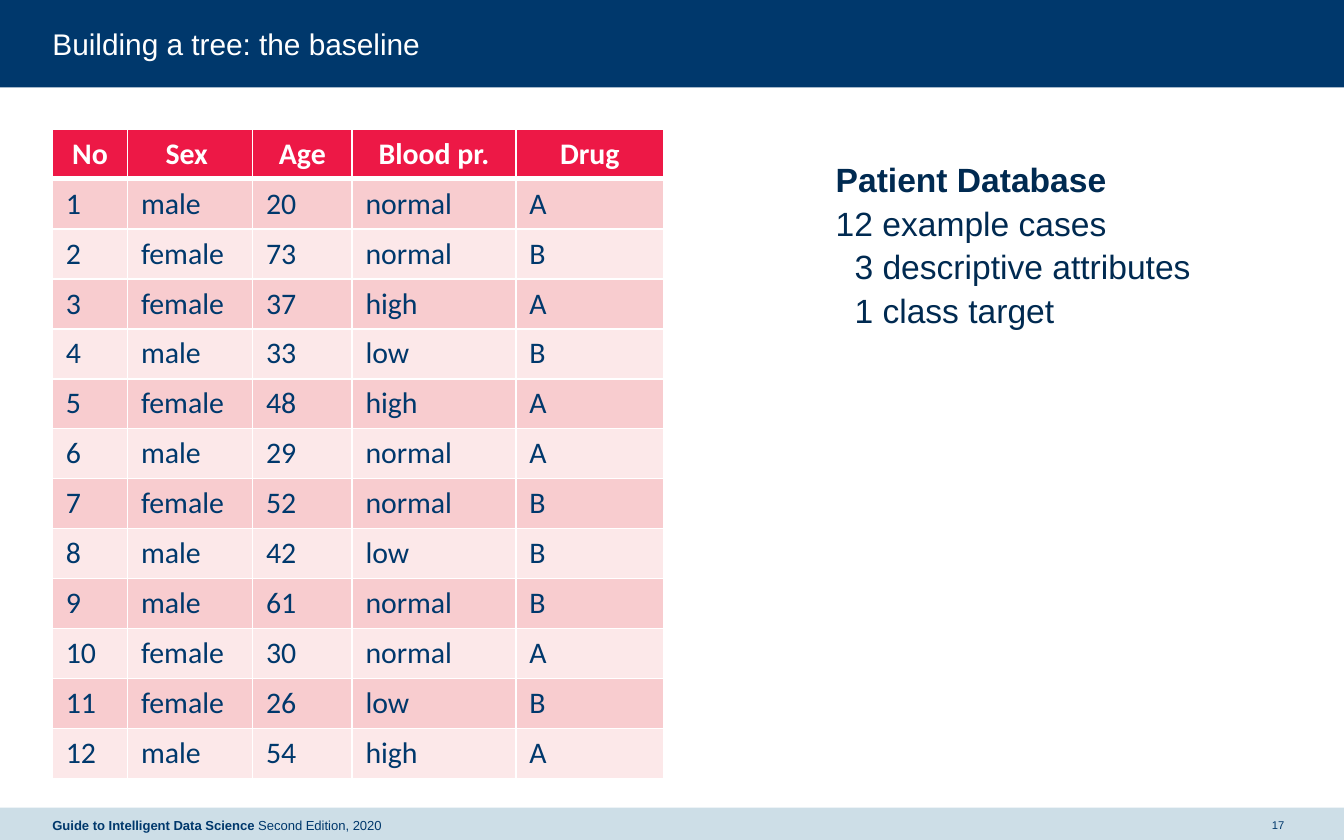
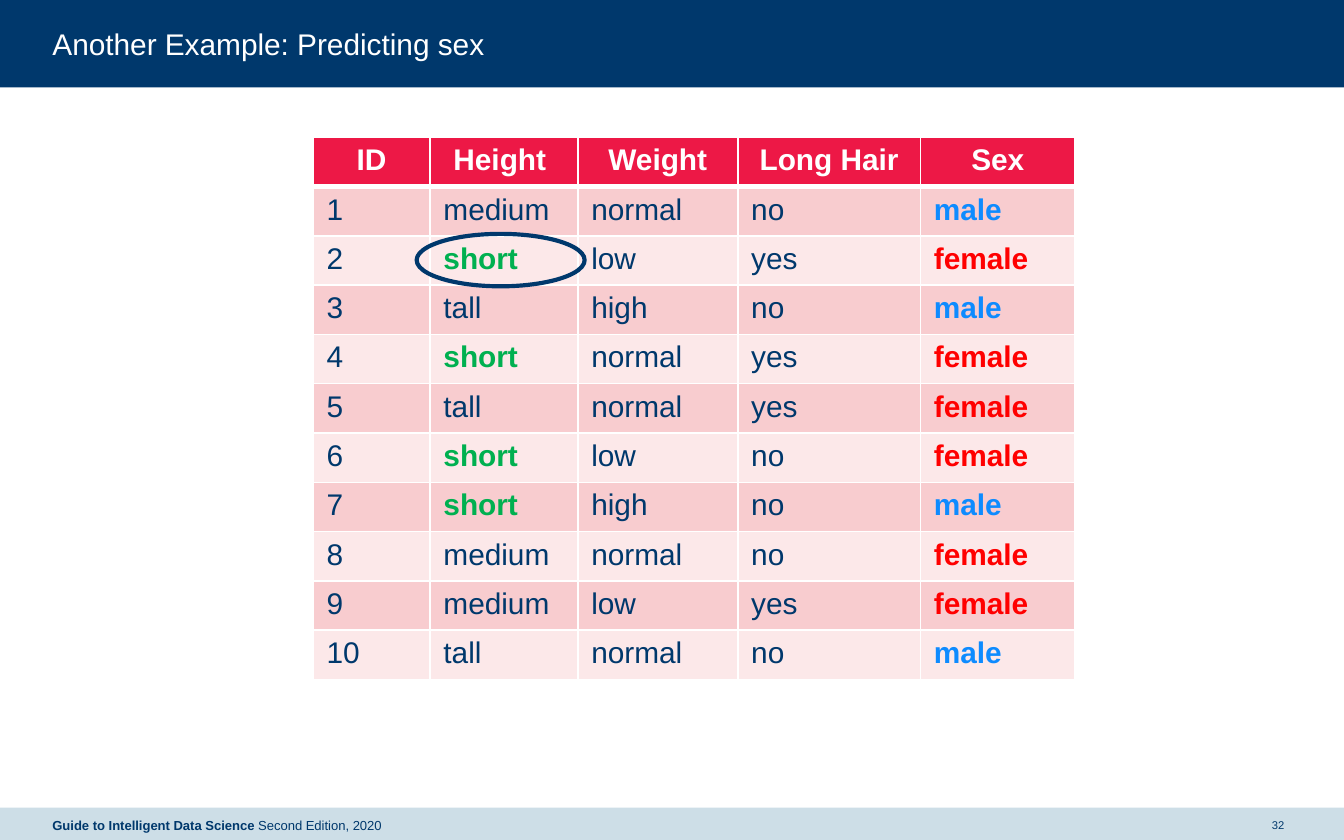
from lxml import etree
from pptx import Presentation
from pptx.dml.color import RGBColor
from pptx.enum.shapes import MSO_SHAPE
from pptx.enum.text import MSO_ANCHOR, PP_ALIGN
from pptx.oxml.ns import qn
from pptx.util import Inches, Pt

RECTANGLE, ELLIPSE = MSO_SHAPE.RECTANGLE, MSO_SHAPE.OVAL
LEFT, CENTER = PP_ALIGN.LEFT, PP_ALIGN.CENTER
TOP, MIDDLE = MSO_ANCHOR.TOP, MSO_ANCHOR.MIDDLE

SLIDE_WIDTH, SLIDE_HEIGHT = Inches(10), Inches(6.25)
GRID_COLUMNS, GRID_ROWS = 100, 62.5
MARGIN = 3.9
FOOTER_TOP, FOOTER_HEIGHT = 60.1, 2.6

COLORS = {
    "navy": "00386C",
    "ink": "002A51",
    "mist": "CDDEE7",
    "white": "FFFFFF",
    "red": "ED1846",
    "rose": "F8CCCF",
    "blush": "FCE8E9",
    "blue": "0E8BFF",
    "scarlet": "FF0000",
    "green": "00B050",
}

PATIENT_HEADER = ["No", "Sex ", "Age", "Blood pr.", "Drug"]
PATIENTS = [
    ("male", "20", "normal", "A"),
    ("female", "73", "normal", "B"),
    ("female", "37", "high", "A"),
    ("male", "33", "low", "B"),
    ("female", "48", "high", "A"),
    ("male", "29", "normal", "A"),
    ("female", "52", "normal", "B"),
    ("male", "42", "low", "B"),
    ("male", "61", "normal", "B"),
    ("female", "30", "normal", "A"),
    ("female", "26", "low", "B"),
    ("male", "54", "high", "A"),
]

PERSON_HEADER = ["ID", "Height ", "Weight", "Long Hair", "Sex"]
PERSONS = [
    ("medium", "normal", "no", "male"),
    ("short", "low", "yes", "female"),
    ("tall", "high", "no", "male"),
    ("short", "normal", "yes", "female"),
    ("tall", "normal", "yes", "female"),
    ("short", "low", "no", "female"),
    ("short", "high", "no", "male"),
    ("medium", "normal", "no", "female"),
    ("medium", "low", "yes", "female"),
    ("tall", "normal", "no", "male"),
]
PERSON_HIGHLIGHTS = {"male": "blue", "female": "scarlet", "short": "green"}


def color(name):
    return RGBColor.from_string(COLORS[name])


def across(columns):
    return round(SLIDE_WIDTH * columns / GRID_COLUMNS)


def down(rows):
    return round(SLIDE_HEIGHT * rows / GRID_ROWS)


def place(left, top, width, height):
    return across(left), down(top), across(width), down(height)


class Deck:
    def __init__(self):
        self.presentation = Presentation()
        self.presentation.slide_width = SLIDE_WIDTH
        self.presentation.slide_height = SLIDE_HEIGHT
        self.slide = None

    def add_slide(self, title, number):
        self.slide = self.presentation.slides.add_slide(self.presentation.slide_layouts[6])
        self.shape(RECTANGLE, 0, 0, GRID_COLUMNS, 6.5, fill="navy")
        self.shape(RECTANGLE, 0, FOOTER_TOP, GRID_COLUMNS, FOOTER_HEIGHT, fill="mist")
        footer = self.text("Guide to Intelligent Data Science ", MARGIN, FOOTER_TOP, 43.9,
                           FOOTER_HEIGHT, size=7, bold=True, anchor=MIDDLE)
        edition = footer.text_frame.paragraphs[0].add_run()
        edition.text = "Second Edition, 2020"
        self.format_run(edition, 7)
        self.text(title, MARGIN, 1.9, 92.2, 2.7, size=16, text_color="white")
        self.text(str(number), 94.1, FOOTER_TOP, 2, FOOTER_HEIGHT, size=6,
                  align=CENTER, anchor=MIDDLE)

    def format_run(self, run, size, text_color="navy", bold=False, font="Arial"):
        run.font.name = font
        run.font.size = Pt(size)
        run.font.bold = bold
        run.font.color.rgb = color(text_color)

    def shape(self, kind, left, top, width, height, fill=None, line=None, line_width=1):
        shape = self.slide.shapes.add_shape(kind, *place(left, top, width, height))
        shape.shadow.inherit = False
        if fill:
            shape.fill.solid()
            shape.fill.fore_color.rgb = color(fill)
        else:
            shape.fill.background()
        if line:
            shape.line.color.rgb = color(line)
            shape.line.width = Pt(line_width)
        else:
            shape.line.fill.background()
        return shape

    def text(self, text, left, top, width, height, size, text_color="navy", bold=False,
             align=LEFT, anchor=TOP):
        box = self.slide.shapes.add_textbox(*place(left, top, width, height))
        frame = box.text_frame
        frame.word_wrap = True
        frame.vertical_anchor = anchor
        frame.margin_left = frame.margin_right = frame.margin_top = frame.margin_bottom = 0
        frame.text = text
        frame.paragraphs[0].alignment = align
        self.format_run(frame.paragraphs[0].runs[0], size, text_color, bold)
        return box

    def note(self, lines, left, top, width, height):
        shape = self.shape(RECTANGLE, left, top, width, height, fill="white")
        frame = shape.text_frame
        frame.word_wrap = True
        frame.vertical_anchor = TOP
        frame.text = "\n".join(text for text, indent in lines)
        for index, (paragraph, (text, indent)) in enumerate(zip(frame.paragraphs, lines)):
            paragraph.alignment = LEFT
            paragraph.line_spacing = 1.08
            paragraph._p.get_or_add_pPr().set("marL", str(across(indent)))
            self.format_run(paragraph.runs[0], 18, "ink", bold=index == 0)

    def border(self, cell, row):
        widths = {"a:lnL": 1, "a:lnR": 1, "a:lnT": 3 if row == 1 else 1,
                  "a:lnB": 3 if row == 0 else 1}
        properties = cell._tc.get_or_add_tcPr()
        for side, width in widths.items():
            line = etree.SubElement(properties, qn(side), w=str(Pt(width)))
            fill = etree.SubElement(line, qn("a:solidFill"))
            etree.SubElement(fill, qn("a:srgbClr"), val=COLORS["white"])

    def table(self, header, records, left, top, column_widths, row_height, font,
              highlights=None):
        highlights = highlights or {}
        rows = [header] + [(str(number), *record) for number, record in enumerate(records, 1)]
        frame = self.slide.shapes.add_table(
            len(rows), len(header),
            *place(left, top, sum(column_widths), row_height * len(rows)))
        table = frame.table
        table.horz_banding = False
        for column, width in zip(table.columns, column_widths):
            column.width = across(width)
        for row, values in enumerate(rows):
            table.rows[row].height = down(row_height)
            is_header = row == 0
            band = "red" if is_header else ("blush", "rose")[row % 2]
            for column, value in enumerate(values):
                cell = table.cell(row, column)
                self.border(cell, row)
                cell.fill.solid()
                cell.fill.fore_color.rgb = color(band)
                cell.text_frame.text = value
                paragraph = cell.text_frame.paragraphs[0]
                paragraph.alignment = CENTER if is_header else LEFT
                text_color = "white" if is_header else highlights.get(value, "navy")
                self.format_run(paragraph.runs[0], 16, text_color,
                                is_header or value in highlights, font)


def main():
    deck = Deck()

    deck.add_slide("Building a tree: the baseline", 17)
    deck.table(PATIENT_HEADER, PATIENTS, MARGIN, 9.6, [5.6, 9.3, 7.4, 12.2, 11], 3.72,
               "Calibri")
    deck.note([("Patient Database", 0), ("12 example cases", 0),
               ("3 descriptive attributes", 1.4), ("1 class target", 1.4)],
              61.2, 11.1, 30, 13.1)

    deck.add_slide("Another Example: Predicting sex", 32)
    deck.table(PERSON_HEADER, PERSONS, 23.3, 10.2, [8.7, 11, 11.9, 13.6, 11.5], 3.47,
               "Arial", PERSON_HIGHLIGHTS)
    deck.shape(ELLIPSE, 31, 17.4, 12.5, 3.9, line="navy", line_width=2.25)

    deck.presentation.save("out.pptx")


if __name__ == "__main__":
    main()
